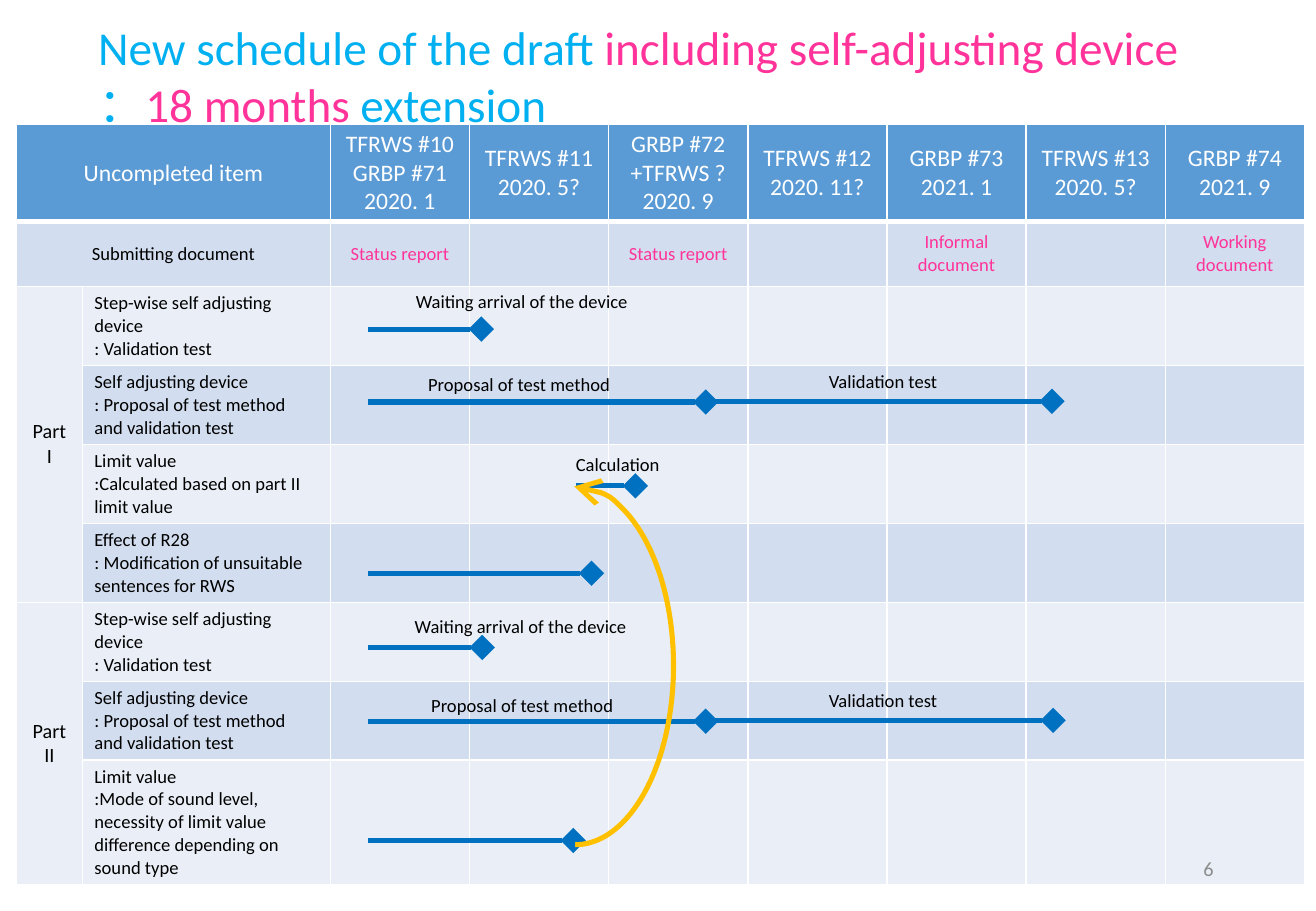
"""Build the schedule slide for the draft including the self-adjusting device."""
from lxml.etree import SubElement
from pptx import Presentation
from pptx.dml.color import RGBColor
from pptx.enum.shapes import MSO_CONNECTOR, MSO_SHAPE
from pptx.enum.text import MSO_ANCHOR, MSO_AUTO_SIZE, PP_ALIGN
from pptx.oxml.ns import qn
from pptx.util import Pt

SKY, PINK, BLUE, GOLD = "00B0F0", "FF3399", "0070C0", "FFC000"
HEADER_FILL, BAND_FILLS = "5B9BD5", ("EAEFF7", "D2DEEF")
WHITE, BLACK, GREY = "FFFFFF", "000000", "8C8C8C"

TITLE = [
    [("New schedule of the draft ", SKY), ("including self-adjusting device", PINK)],
    [("：", SKY), ("18 months ", PINK), ("extension", SKY)],
]
MEETINGS = [
    ["TFRWS #10", "GRBP #71", "2020. 1"],
    ["TFRWS #11", "2020. 5?"],
    ["GRBP #72", "+TFRWS ?", "2020. 9"],
    ["TFRWS #12", "2020. 11?"],
    ["GRBP #73", "2021. 1"],
    ["TFRWS #13", "2020. 5?"],
    ["GRBP #74", "2021. 9"],
]
DOCUMENTS = [["Status report"], [], ["Status report"], [],
             ["Informal document"], [], ["Working", "document"]]
STEP_WISE = ["Step-wise self adjusting device", ": Validation test"]
SELF_ADJUSTING = ["Self adjusting device",
                  ": Proposal of test method and validation test"]
PARTS = {
    "Part I": [
        STEP_WISE,
        SELF_ADJUSTING,
        ["Limit value", ":Calculated based on part II limit value"],
        ["Effect of R28", ": Modification of unsuitable sentences for RWS"],
    ],
    "Part II": [
        STEP_WISE,
        SELF_ADJUSTING,
        ["Limit value", ":Mode of sound level, necessity of limit value "
         "difference depending on sound type"],
    ],
}
BARS = [
    (218.2, 285.3, 195.1), (218.2, 418.3, 238.3), (423.4, 623.5, 237.9),
    (341.3, 376.6, 288), (218.2, 350.6, 339.8), (218.2, 285.8, 383.8),
    (218.2, 418.3, 427.5), (423.4, 624.2, 427), (218.2, 339.8, 498.2),
]
BAR_LABELS = [
    ("Waiting arrival of the device", 233.3, 168.5, 152),
    ("Proposal of test method", 239, 217.4, 137.5),
    ("Validation test", 475.9, 216, 95),
    ("Calculation", 304.6, 265, 123),
    ("Waiting arrival of the device", 232.6, 360.7, 152),
    ("Proposal of test method", 242.6, 407.5, 134),
    ("Validation test", 475.9, 404.6, 95),
]
COLUMN_WIDTHS = [39, 147] + [82.5] * len(MEETINGS)
ROW_HEIGHTS = [57.5, 38.5] + [46.8] * 6 + [72.9]


def color(code):
    return RGBColor.from_string(code)


def write(frame, paragraphs, size=11, ink=BLACK, align=PP_ALIGN.CENTER):
    for index, content in enumerate(paragraphs):
        paragraph = frame.add_paragraph() if index else frame.paragraphs[0]
        paragraph.alignment = align
        pieces = [(content, ink)] if isinstance(content, str) else content
        for words, shade in pieces:
            run = paragraph.add_run()
            run.text = words
            run.font.size, run.font.name = Pt(size), "Calibri"
            run.font.color.rgb = color(shade)


def add_label(slide, words, left, top, width, height=21, **style):
    frame = slide.shapes.add_textbox(Pt(left), Pt(top), Pt(width), Pt(height)).text_frame
    frame.word_wrap = True
    write(frame, [words], **style)
    return frame


def style_line(stroke, ink, end, kind):
    stroke.line.color.rgb = color(ink)
    stroke.line.width = Pt(3)
    SubElement(stroke.line._get_or_add_ln(), qn("a:" + end), type=kind, w="lg", len="lg")


def style_cell(cell, fill, bottom_width):
    properties = cell._tc.get_or_add_tcPr()
    for side in ("lnL", "lnR", "lnT", "lnB"):
        width = bottom_width if side == "lnB" else 1
        border = SubElement(properties, qn("a:" + side), w=str(Pt(width)))
        SubElement(SubElement(border, qn("a:solidFill")), qn("a:srgbClr"), val=WHITE)
    cell.fill.solid()
    cell.fill.fore_color.rgb = color(fill)
    cell.margin_top = cell.margin_bottom = Pt(3)
    cell.vertical_anchor = MSO_ANCHOR.MIDDLE


def add_schedule(slide):
    schedule = slide.shapes.add_table(
        len(ROW_HEIGHTS), len(COLUMN_WIDTHS), Pt(9.8), Pt(73.8),
        Pt(sum(COLUMN_WIDTHS)), Pt(sum(ROW_HEIGHTS))).table
    for column, width in zip(schedule.columns, COLUMN_WIDTHS):
        column.width = Pt(width)
    for index, (row, height) in enumerate(zip(schedule.rows, ROW_HEIGHTS)):
        row.height = Pt(height)
        for cell in row.cells:
            style_cell(cell, BAND_FILLS[index % 2] if index else HEADER_FILL,
                       1 if index else 3)

    top_rows = [("Uncompleted item", MEETINGS, 14, WHITE, WHITE),
                ("Submitting document", DOCUMENTS, 11, BLACK, PINK)]
    for row, (heading, entries, size, heading_ink, ink) in enumerate(top_rows):
        schedule.cell(row, 0).merge(schedule.cell(row, 1))
        write(schedule.cell(row, 0).text_frame, [heading], size=size, ink=heading_ink)
        for column, entry in enumerate(entries, 2):
            write(schedule.cell(row, column).text_frame, entry, size=size, ink=ink)

    row = len(top_rows)
    for part, items in PARTS.items():
        schedule.cell(row, 0).merge(schedule.cell(row + len(items) - 1, 0))
        write(schedule.cell(row, 0).text_frame, [part], size=12)
        for item in items:
            write(schedule.cell(row, 1).text_frame, item, align=PP_ALIGN.LEFT)
            row += 1


def main():
    deck = Presentation()
    deck.slide_width, deck.slide_height = Pt(780), Pt(540)
    slide = deck.slides.add_slide(deck.slide_layouts[5])

    title = slide.shapes.title
    title.left, title.top, title.width, title.height = Pt(51), Pt(7.2), Pt(710), Pt(75)
    title.text_frame.auto_size = MSO_AUTO_SIZE.NONE
    title.text_frame.vertical_anchor = MSO_ANCHOR.TOP
    write(title.text_frame, TITLE, size=28, align=PP_ALIGN.LEFT)

    add_schedule(slide)

    for start, end, level in BARS:
        bar = slide.shapes.add_connector(
            MSO_CONNECTOR.STRAIGHT, Pt(start), Pt(level), Pt(end), Pt(level))
        style_line(bar, BLUE, "tailEnd", "diamond")
        SubElement(bar._element.spPr, qn("a:effectLst"))
    for label in BAR_LABELS:
        add_label(slide, *label)

    feedback = slide.shapes.add_shape(
        MSO_SHAPE.ARC, Pt(234.7), Pt(336.2), Pt(212.4), Pt(116.6))
    feedback.rotation = 90
    feedback.adjustments[0], feedback.adjustments[1] = 107.82, 0
    feedback.fill.background()
    style_line(feedback, GOLD, "headEnd", "arrow")
    feedback.shadow.inherit = False

    page = add_label(slide, "6", 550.8, 500.4, 175.7, 28.8,
                     size=12, ink=GREY, align=PP_ALIGN.RIGHT)
    page.vertical_anchor = MSO_ANCHOR.MIDDLE
    deck.save("out.pptx")


if __name__ == "__main__":
    main()
